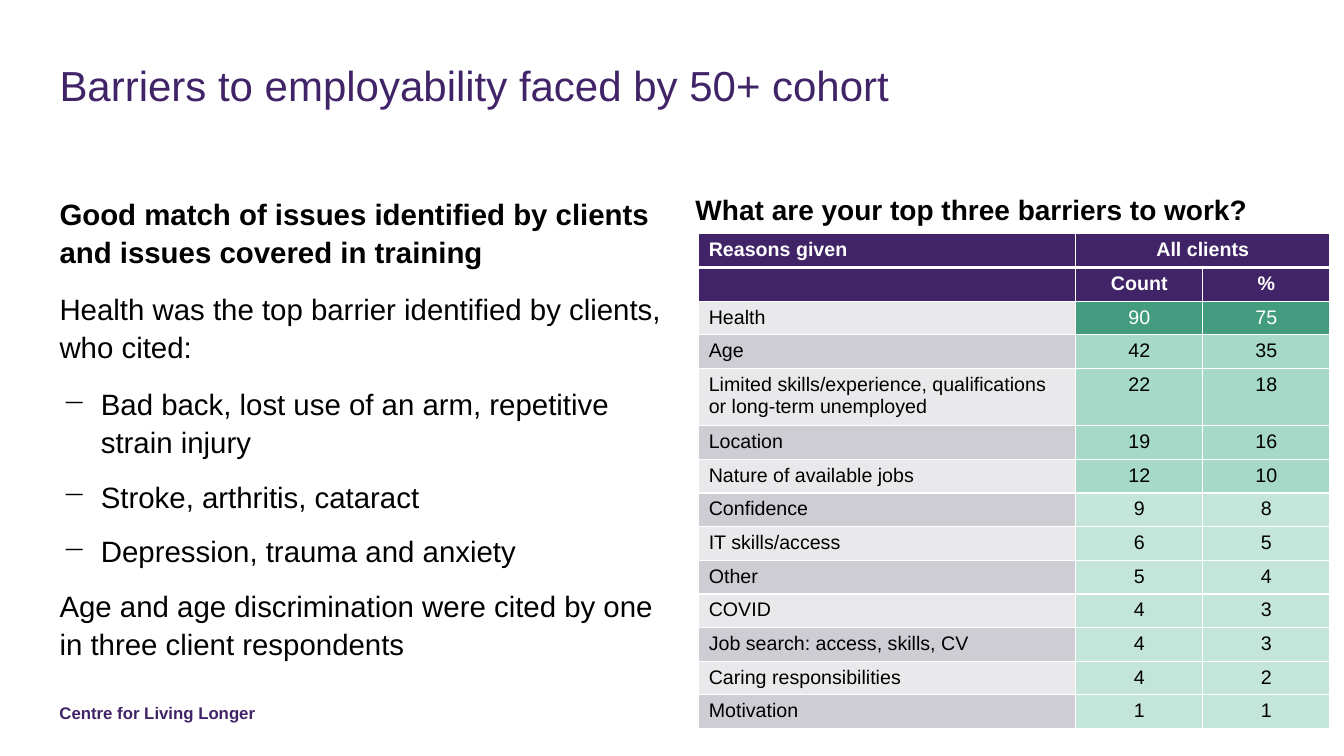
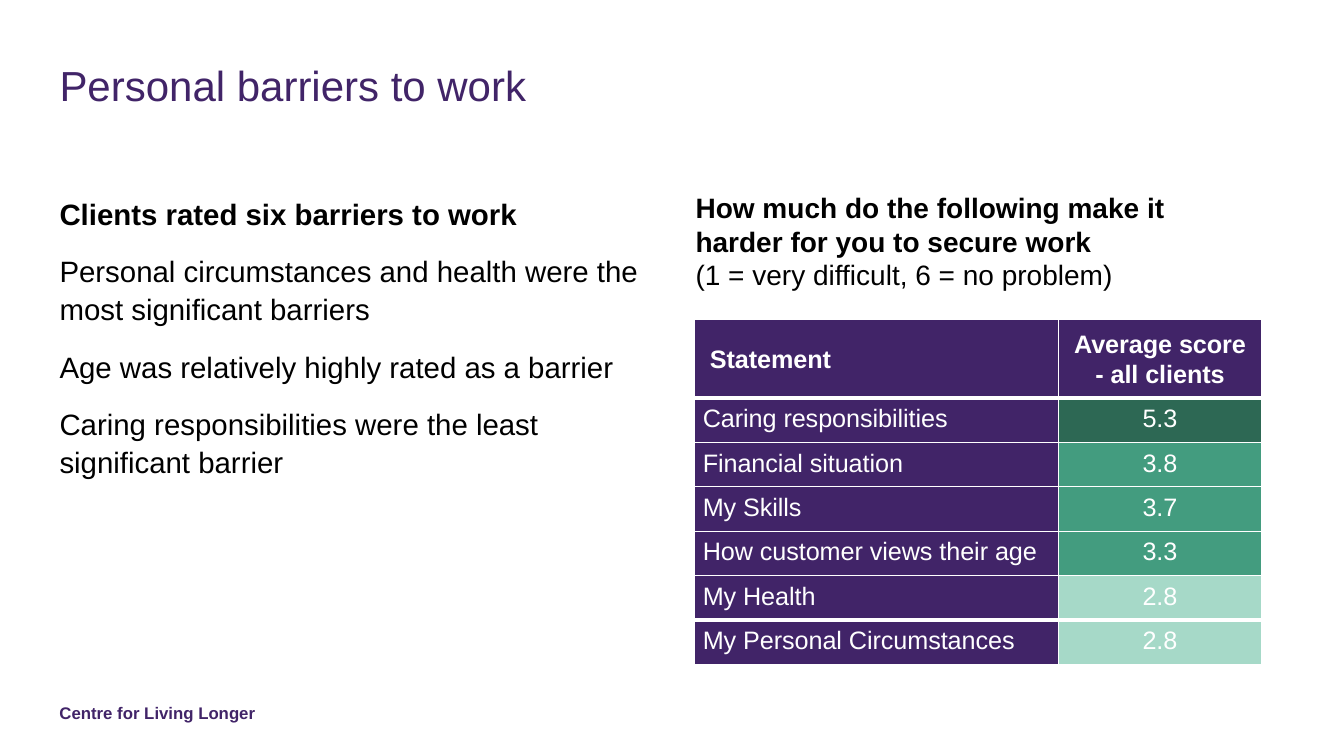
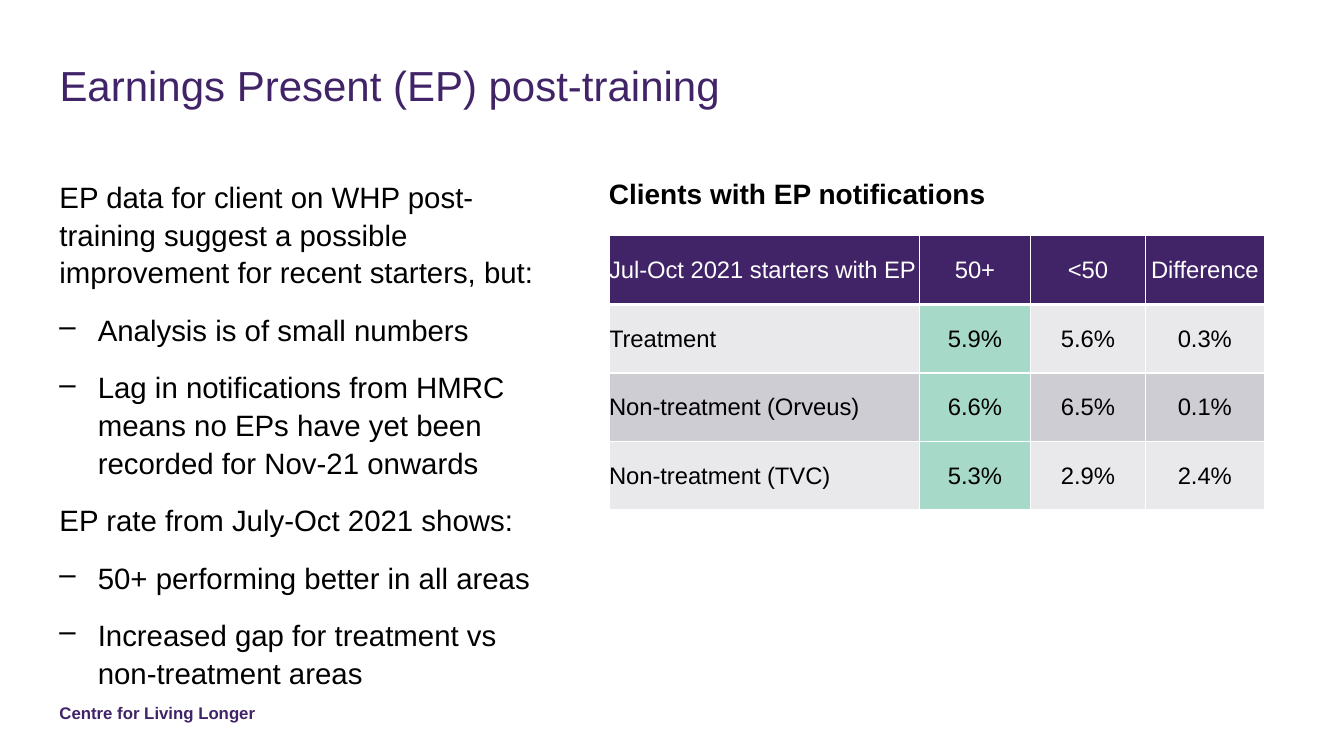
from dataclasses import dataclass
from lxml.etree import SubElement
from pptx import Presentation
from pptx.dml.color import RGBColor
from pptx.enum.text import MSO_ANCHOR as ANCHOR, PP_ALIGN as ALIGN
from pptx.oxml.ns import qn
from pptx.util import Inches, Pt


@dataclass(frozen=True)
class Theme:
    font: str = "Arial"
    purple: str = "412468"
    black: str = "000000"
    white: str = "FFFFFF"
    bands: tuple = ("E9E8EB", "CFCDD4")
    forest: str = "2D6854"
    green: str = "439C7F"
    mint: str = "A6D9C8"
    pale: str = "C4E5DA"
    title: int = 30
    body: int = 21
    heading: int = 20
    footer: int = 12


T = Theme()
FOOTER = "Centre for Living Longer"


# Cell colours: (fill, text) for a body cell
def band_fill(row, col, value):
    return T.bands[row % 2], T.black


def reason_style(row, col, value):
    if col == 0:
        return band_fill(row, col, value)
    n = int(value)
    if n >= 50:
        return T.green, T.white
    return (T.mint if n >= 10 else T.pale), T.black


def score_style(row, col, value):
    if col == 0:
        return T.purple, T.white
    score = float(value)
    return (T.forest if score >= 5 else T.green if score >= 3 else T.mint), T.white


def earnings_style(row, col, value):
    return (T.mint, T.black) if col == 1 else band_fill(row + 1, col, value)


# Content: body paragraphs are (kind, text)
SLIDES = [
    {
        "title": "Barriers to employability faced by 50+ cohort",
        "body_at": (0.59, 1.92, 6.08, 4.84),
        "bullet": ("−", 0.41, 12),
        "body": [
            ("bold", "Good match of issues identified by clients and issues covered in training"),
            ("plain", "Health was the top barrier identified by clients, who cited:"),
            ("bullet", "Bad back, lost use of an arm, repetitive strain injury"),
            ("bullet", "Stroke, arthritis, cataract"),
            ("bullet", "Depression, trauma and anxiety"),
            ("plain", "Age and age discrimination were cited by one in three client respondents"),
        ],
        "heading": "What are your top three barriers to work?",
        "heading_at": (6.8, 1.86, 6.54, 0.44),
        "table": {
            "at": (6.93, 2.32), "cols": (3.74, 1.26, 1.26),
            "heights": [0.31] * 4 + [0.53] + [0.31] * 9,
            "size": 14, "head": 2, "bold_head": True, "merge": ((0, 1), (0, 2)),
            "thick": {1}, "lead": (0.1, 0.1), "pad": 0.05,
            "anchor": ANCHOR.TOP, "style": reason_style,
            "rows": [
                ("Reasons given", "All clients", ""),
                ("", "Count", "%"),
                ("Health", "90", "75"),
                ("Age", "42", "35"),
                ("Limited skills/experience, qualifications\vor long-term unemployed", "22", "18"),
                ("Location", "19", "16"),
                ("Nature of available jobs", "12", "10"),
                ("Confidence", "9", "8"),
                ("IT skills/access", "6", "5"),
                ("Other", "5", "4"),
                ("COVID", "4", "3"),
                ("Job search: access, skills, CV", "4", "3"),
                ("Caring responsibilities", "4", "2"),
                ("Motivation", "1", "1"),
            ],
        },
    },
    {
        "title": "Personal barriers to work",
        "body_at": (0.59, 1.92, 6.08, 4.84),
        "body": [
            ("bold", "Clients rated six barriers to work"),
            ("plain", "Personal circumstances and health were the most significant barriers"),
            ("plain", "Age was relatively highly rated as a barrier"),
            ("plain", "Caring responsibilities were the least significant barrier"),
        ],
        "heading": "How much do the following make it harder for you to secure work"
                   "\v(1 = very difficult, 6 = no problem)",
        "heading_at": (6.8, 1.84, 5.62, 1.11),
        "table": {
            "at": (6.89, 3.17), "cols": (3.61, 2.01), "heights": [0.78] + [0.44] * 6,
            "size": 18, "head": 1, "bold_head": True, "thick": {1, 6},
            "lead": (0.15, 0.08), "pad": 0, "tracking": -5,
            "leading": (1.08, Pt(18.4)),
            "anchor": ANCHOR.MIDDLE, "style": score_style,
            "rows": [
                ("Statement", "Average score\v- all clients"),
                ("Caring responsibilities", "5.3"),
                ("Financial situation", "3.8"),
                ("My Skills", "3.7"),
                ("How customer views their age", "3.3"),
                ("My Health", "2.8"),
                ("My Personal Circumstances", "2.8"),
            ],
        },
    },
    {
        "title": "Earnings Present (EP) post-training",
        "body_at": (0.59, 1.75, 4.83, 5.01),
        "bullet": ("–", 0.38, 14),
        "body": [
            ("plain", "EP data for client on WHP post-training suggest a possible "
                      "improvement for recent starters, but:"),
            ("bullet", "Analysis is of small numbers"),
            ("bullet", "Lag in notifications from HMRC means no EPs have yet been "
                       "recorded for Nov-21 onwards"),
            ("plain", "EP rate from July-Oct 2021 shows:"),
            ("bullet", "50+ performing better in all areas"),
            ("bullet", "Increased gap for treatment vs non-treatment areas"),
        ],
        "heading": "Clients with EP notifications",
        "heading_at": (5.94, 1.7, 7.08, 0.44),
        "table": {
            "at": (6.04, 2.34), "cols": (3.08, 1.1, 1.14, 1.18), "heights": [0.68] * 4,
            "size": 17, "head": 1, "bold_head": False, "thick": {1},
            "lead": (0, 0), "pad": 0, "tracking": -5,
            "anchor": ANCHOR.MIDDLE, "style": earnings_style,
            "rows": [
                ("Jul-Oct 2021 starters with EP", "50+", "<50", "Difference"),
                ("Treatment", "5.9%", "5.6%", "0.3%"),
                ("Non-treatment (Orveus)", "6.6%", "6.5%", "0.1%"),
                ("Non-treatment (TVC)", "5.3%", "2.9%", "2.4%"),
            ],
        },
    },
]


# Text helpers
def format_runs(p, size, color, bold=False):
    for r in p.runs:
        r.font.name, r.font.size, r.font.bold = T.font, Pt(size), bold
        r.font.color.rgb = RGBColor.from_string(color)


def add_box(s, at, inset=True):
    tf = s.shapes.add_textbox(*map(Inches, at)).text_frame
    tf.word_wrap = True
    if not inset:
        tf.margin_left = tf.margin_right = tf.margin_top = tf.margin_bottom = 0
    return tf


def add_line(s, text, at, size, color, bold=False, leading=None, inset=False):
    p = add_box(s, at, inset).paragraphs[0]
    p.text = text
    p.line_spacing = leading
    format_runs(p, size, color, bold)
    return p


def add_bullet(p, char, indent):
    pPr = p._p.get_or_add_pPr()
    pPr.set("marL", str(Inches(indent)))
    pPr.set("indent", str(-Inches(0.38)))
    SubElement(pPr, qn("a:buChar"), char=char)


def add_body(s, spec):
    tf = add_box(s, spec["body_at"], inset=False)
    for i, (kind, text) in enumerate(spec["body"]):
        p = tf.add_paragraph() if i else tf.paragraphs[0]
        p.text = text
        after = 14
        if kind == "bullet":
            char, indent, after = spec["bullet"]
            add_bullet(p, char, indent)
        p.line_spacing, p.space_after = Pt(27), Pt(after)
        format_runs(p, T.body, T.black, kind == "bold")


# Tables
def add_borders(cell, row, thick):
    tcPr = cell._tc.get_or_add_tcPr()
    widths = {"L": 1, "R": 1, "T": 3 if row in thick else 1, "B": 3 if row + 1 in thick else 1}
    for side, width in widths.items():
        ln = SubElement(tcPr, qn("a:ln" + side), w=str(Pt(width)))
        SubElement(SubElement(ln, qn("a:solidFill")), qn("a:srgbClr"), val=T.white)


def fill_cell(cell, row, col, text, t):
    is_head = row < t["head"]
    fill, color = (T.purple, T.white) if is_head else t["style"](row, col, text)
    add_borders(cell, row, t["thick"])
    cell.fill.solid()
    cell.fill.fore_color.rgb = RGBColor.from_string(fill)
    cell.vertical_anchor = t["anchor"]
    cell.margin_left = Inches(0 if col else t["lead"][not is_head])
    cell.margin_right = 0
    cell.margin_top = cell.margin_bottom = Inches(t["pad"])
    p = cell.text_frame.paragraphs[0]
    p.text = text
    p.alignment = ALIGN.CENTER if col else ALIGN.LEFT
    if "leading" in t:
        p.line_spacing = t["leading"][not is_head]
    format_runs(p, t["size"], color, is_head and t["bold_head"])
    for r in p.runs:
        r._r.get_or_add_rPr().set("spc", str(t.get("tracking", 0)))
    if not text:
        SubElement(p._p, qn("a:endParaRPr"), sz=str(t["size"] * 100))


def add_data_table(s, t):
    rows, cols, heights = t["rows"], t["cols"], t["heights"]
    size = map(Inches, (*t["at"], sum(cols), sum(heights)))
    table = s.shapes.add_table(len(rows), len(cols), *size).table
    table.first_row = table.horz_banding = False
    for column, width in zip(table.columns, cols):
        column.width = Inches(width)
    for row, height in zip(table.rows, heights):
        row.height = Inches(height)
    for i, row in enumerate(rows):
        for j, text in enumerate(row):
            fill_cell(table.cell(i, j), i, j, text, t)
    if "merge" in t:
        first, last = t["merge"]
        table.cell(*first).merge(table.cell(*last))


# Slides
def add_slide(prs, spec):
    s = prs.slides.add_slide(prs.slide_layouts[6])
    add_line(s, FOOTER, (0.59, 6.97, 3.56, 0.2), T.footer, T.purple, bold=True)
    add_line(s, spec["title"], (0.59, 0.59, 12.15, 1.13), T.title, T.purple, leading=Pt(36))
    add_body(s, spec)
    heading = add_line(s, spec["heading"], spec["heading_at"], T.heading, T.black,
                       bold=True, inset=True)
    for r in heading.runs[1:]:
        r.font.bold = False
    add_data_table(s, spec["table"])


def main():
    prs = Presentation()
    prs.slide_width, prs.slide_height = Inches(13.33), Inches(7.5)
    for spec in SLIDES:
        add_slide(prs, spec)
    prs.save("out.pptx")


if __name__ == "__main__":
    main()
